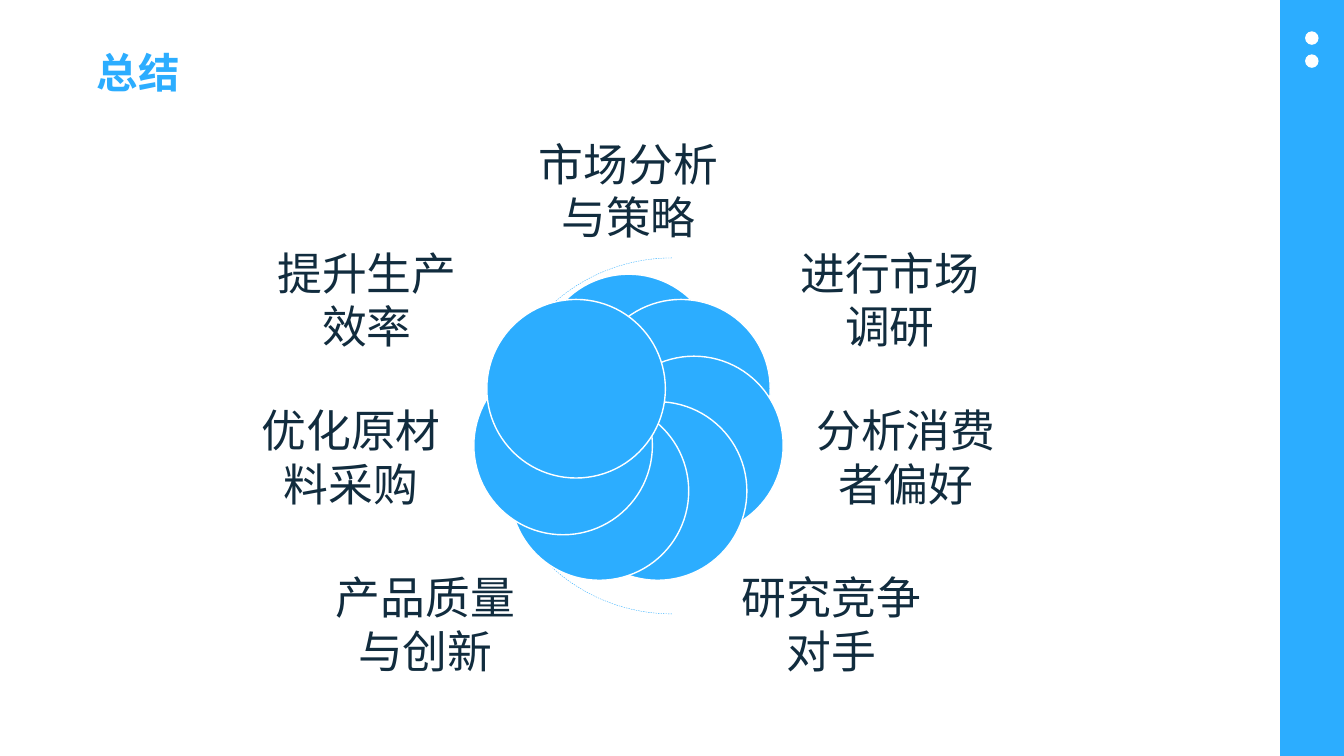
"""Build a summary slide with seven labelled petals around a ring."""
from math import cos, pi, sin

from lxml.etree import SubElement
from pptx import Presentation
from pptx.dml.color import RGBColor
from pptx.enum.dml import MSO_LINE
from pptx.enum.shapes import MSO_SHAPE as Shape
from pptx.enum.text import MSO_ANCHOR as Anchor, MSO_AUTO_SIZE as AutoSize, PP_ALIGN as Align
from pptx.oxml.ns import qn
from pptx.util import Cm, Pt

BLUE, WHITE, NAVY = "2CADFF", "FFFFFF", "112C3E"
CJK, LATIN = "Noto Sans CJK SC", "Roboto"
TITLE = "总结"
LABELS = ["市场分析与策略", "进行市场调研", "分析消费者偏好", "研究竞争对手",
          "产品质量与创新", "优化原材料采购", "提升生产效率"]
LABEL_ROWS = [(0, 4.79, 5.16, 2.77), (6.59, 7.54, 4.88, 3.05),
              (6.99, 11.51, 4.78, 3.25), (5.12, 15.71, 5.16, 2.97)]
CENTRE_X, CENTRE_Y = 15.84, 10.85
RING, PETAL = 1.69, 4.5


def rgb(value):
    return RGBColor.from_string(value)


def add_shape(s, kind, x, y, w, h, fill=None, line=None, width=1):
    sp = s.shapes.add_shape(kind, Cm(x), Cm(y), Cm(w), Cm(h))
    sp.shadow.inherit = False
    if fill:
        sp.fill.solid()
        sp.fill.fore_color.rgb = rgb(fill)
    else:
        sp.fill.background()
    if line:
        sp.line.color.rgb = rgb(line)
        sp.line.width = Pt(width)
    else:
        sp.line.fill.background()
    return sp


def set_text(sp, text, size, font, color, align, bold=False):
    tf = sp.text_frame
    tf.word_wrap = True
    tf.auto_size = AutoSize.NONE
    tf.vertical_anchor = Anchor.MIDDLE
    p = tf.paragraphs[0]
    p.alignment = align
    r = p.add_run()
    r.text = text
    r.font.size, r.font.bold, r.font.name = Pt(size), bold, font
    r.font.color.rgb = rgb(color)
    SubElement(r.font._element, qn("a:ea")).set("typeface", font)
    return tf


def add_label(s, text, x, y, w, h):
    box = s.shapes.add_textbox(Cm(x - w / 2), Cm(y - h / 2), Cm(w), Cm(h))
    tf = set_text(box, text, 32, LATIN, NAVY, Align.CENTER)
    tf.margin_left = tf.margin_right = tf.margin_top = tf.margin_bottom = 0


def main():
    prs = Presentation()
    prs.slide_width, prs.slide_height = Cm(33.87), Cm(19.05)
    s = prs.slides.add_slide(prs.slide_layouts[5])

    title = s.shapes.title
    title.left, title.top, title.width, title.height = Cm(2.18), Cm(0.94), Cm(22.43), Cm(1.63)
    tf = set_text(title, TITLE, 29.6, CJK, BLUE, Align.LEFT, bold=True)
    tf.paragraphs[0].line_spacing = 1.1

    add_shape(s, Shape.RECTANGLE, 32.26, 0, 1.61, 19.05, BLUE)
    for y in (0.79, 1.37):
        add_shape(s, Shape.OVAL, 32.89, y, 0.34, 0.34, WHITE)

    arc = add_shape(s, Shape.ARC, 12.45, 6.5, 8.97, 8.97, line=BLUE, width=0.25)
    arc.adjustments[0], arc.adjustments[1] = 54, 162
    arc.line.dash_style = MSO_LINE.DASH

    for i in range(len(LABELS)):
        angle = 2 * pi * i / len(LABELS)
        x = CENTRE_X + RING * sin(angle) - PETAL / 2
        y = CENTRE_Y - RING * cos(angle) - PETAL / 2
        add_shape(s, Shape.OVAL, x, y, PETAL, PETAL, BLUE, WHITE)

    for i, text in enumerate(LABELS):
        row, side = (i, 1) if i < len(LABEL_ROWS) else (len(LABELS) - i, -1)
        offset, y, w, h = LABEL_ROWS[row]
        add_label(s, text, CENTRE_X + side * offset, y, w, h)

    prs.save("out.pptx")


if __name__ == "__main__":
    main()
